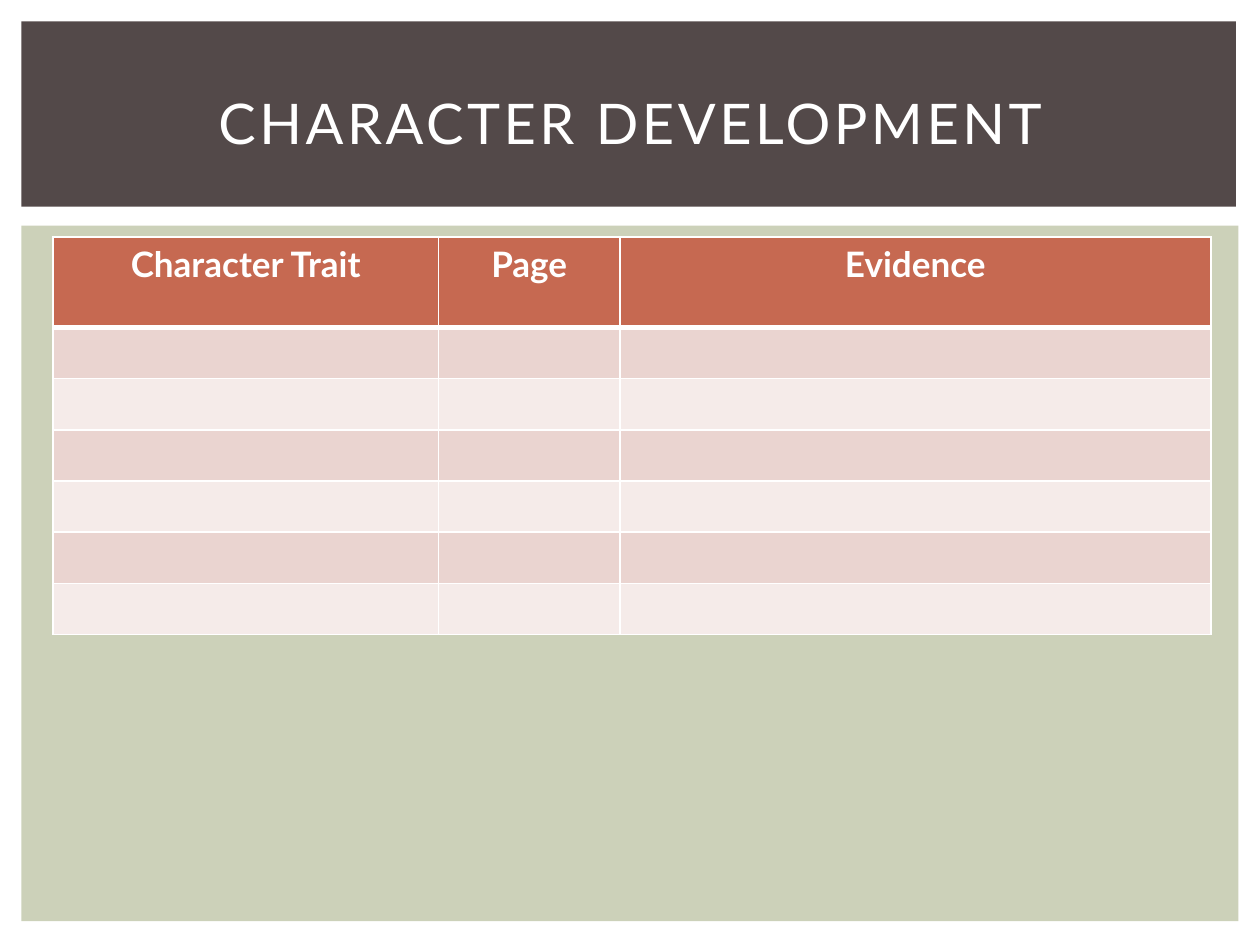
from pptx import Presentation
from pptx.dml.color import RGBColor
from pptx.enum.shapes import MSO_SHAPE
from pptx.enum.text import MSO_ANCHOR, PP_ALIGN
from pptx.oxml.ns import qn
from pptx.util import Inches, Pt
from lxml.etree import SubElement

COLUMNS, ROWS = 100, 75
WHITE, SAGE, UMBER, RUST = "FFFFFF", "CCD1B9", "534949", "C66951"
BANDS = ["EAD4D0", "F5EBE9"]


def color(value):
    return RGBColor.from_string(value)


class Page:
    font_format = {"name": "Lato"}
    title_format = {"size": Pt(32), "bold": False}
    heading_format = {"size": Pt(20), "bold": True}

    def __init__(self, deck):
        self.slide = deck.slides.add_slide(deck.slide_layouts[6])
        self.column = deck.slide_width / COLUMNS
        self.row = deck.slide_height / ROWS

    def place(self, left, top, width, height):
        return (round(left * self.column), round(top * self.row),
                round(width * self.column), round(height * self.row))

    def panel(self, area, fill):
        panel = self.slide.shapes.add_shape(MSO_SHAPE.RECTANGLE, *self.place(*area))
        panel.shadow.inherit = False
        panel.fill.solid()
        panel.fill.fore_color.rgb = color(fill)
        panel.line.fill.background()

    def centered_text(self, frame, words, text_format):
        paragraph = frame.paragraphs[0]
        paragraph.alignment = PP_ALIGN.CENTER
        run = paragraph.add_run()
        run.text = words
        for key, value in {**self.font_format, **text_format}.items():
            setattr(run.font, key, value)
        run.font.color.rgb = color(WHITE)
        return run

    def title(self, area, words, spacing):
        frame = self.slide.shapes.add_textbox(*self.place(*area)).text_frame
        frame.word_wrap = True
        frame.vertical_anchor = MSO_ANCHOR.MIDDLE
        run = self.centered_text(frame, words, self.title_format)
        run.font._element.set("spc", str(spacing * 100))

    def style_cell(self, cell, fill, bottom):
        properties = cell._tc.get_or_add_tcPr()
        for side, points in {"lnL": 1, "lnR": 1, "lnT": 1, "lnB": bottom}.items():
            border = SubElement(properties, qn(f"a:{side}"), w=str(int(Pt(points))))
            paint = SubElement(border, qn("a:solidFill"))
            SubElement(paint, qn("a:srgbClr"), val=WHITE)
        cell.fill.solid()
        cell.fill.fore_color.rgb = color(fill)

    def table(self, left, top, headings, header_height, row_height, blank_rows):
        heights = [header_height] + [row_height] * blank_rows
        area = self.place(left, top, sum(headings.values()), sum(heights))
        table = self.slide.shapes.add_table(len(heights), len(headings), *area).table
        for column, width in zip(table.columns, headings.values()):
            column.width = round(width * self.column)
        for index, height in enumerate(heights):
            table.rows[index].height = round(height * self.row)
            fill = BANDS[(index - 1) % 2] if index else RUST
            for cell in table.rows[index].cells:
                self.style_cell(cell, fill, 1 if index else 3)
        for cell, heading in zip(table.rows[0].cells, headings):
            self.centered_text(cell.text_frame, heading, self.heading_format)


def main():
    deck = Presentation()
    deck.slide_width, deck.slide_height = Inches(10), Inches(7.5)
    page = Page(deck)
    page.panel((1.7, 17.9, 96.6, 55.2), SAGE)
    page.panel((1.7, 1.7, 96.4, 14.7), UMBER)
    trait_columns = {"Character Trait": 30.6, "Page": 14.4, "Evidence": 46.9}
    page.table(4.2, 18.8, trait_columns, header_height=7.2, row_height=4.06, blank_rows=6)
    page.title((4.2, 3.9, 91.7, 11.5), "CHARACTER DEVELOPMENT", spacing=2)
    deck.save("out.pptx")


if __name__ == "__main__":
    main()
